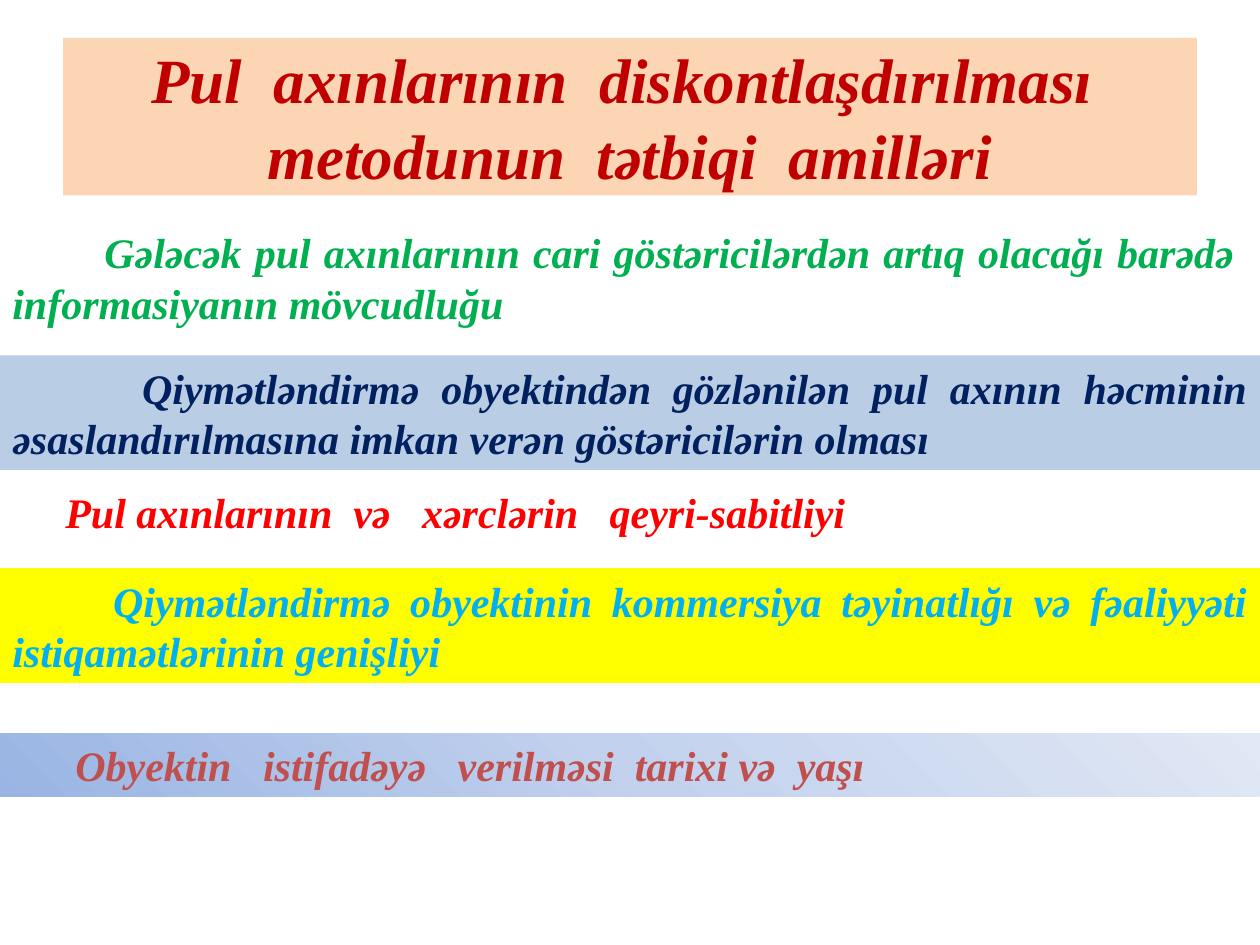
import pptx
import pptx.dml.color
import pptx.enum.shapes
import pptx.enum.text
import pptx.oxml
import pptx.oxml.ns
import pptx.util

Inches = pptx.util.Inches
RGBColor = pptx.dml.color.RGBColor
ALIGN = pptx.enum.text.PP_ALIGN
ANCHOR = pptx.enum.text.MSO_ANCHOR

FONT = "Times New Roman"
PEACH = RGBColor(0xFC, 0xD5, 0xB5)
DARK_RED = RGBColor(0xC0, 0x00, 0x00)
GREEN = RGBColor(0x00, 0xB0, 0x50)
PALE_BLUE = RGBColor(0xB9, 0xCD, 0xE5)
NAVY = RGBColor(0x00, 0x20, 0x60)
RED = RGBColor(0xFF, 0x00, 0x00)
YELLOW = RGBColor(0xFF, 0xFF, 0x00)
SKY = RGBColor(0x00, 0xB0, 0xF0)
BRICK = RGBColor(0xC0, 0x50, 0x4D)
GLOW = [
    (0, RGBColor(0x9A, 0xB5, 0xE4)),
    (50, RGBColor(0xC2, 0xD1, 0xED)),
    (100, RGBColor(0xE1, 0xE8, 0xF5)),
]


def write_text(box, text, color, size=24, align=ALIGN.JUSTIFY, indent=0, anchor=ANCHOR.MIDDLE):
    frame = box.text_frame
    frame.word_wrap = True
    frame.auto_size = pptx.enum.text.MSO_AUTO_SIZE.NONE
    frame.vertical_anchor = anchor
    para = frame.paragraphs[0]
    para.alignment = align
    if indent:
        para._p.get_or_add_pPr().set("indent", str(Inches(indent)))
    span = para.add_run()
    span.text = text
    span.font.name = FONT
    span.font.size = pptx.util.Pt(size)
    span.font.bold = span.font.italic = True
    span.font.color.rgb = color


def fill_from_corner(shape, stops):
    """Radial gradient that spreads from the bottom left corner."""
    stop_xml = "".join(
        f'<a:gs pos="{percent * 1000}"><a:srgbClr val="{color}"/></a:gs>'
        for percent, color in stops
    )
    gradient = pptx.oxml.parse_xml(
        f'<a:gradFill {pptx.oxml.ns.nsdecls("a")} rotWithShape="1"><a:gsLst>{stop_xml}</a:gsLst>'
        '<a:path path="circle"><a:fillToRect t="100000" r="100000"/></a:path></a:gradFill>'
    )
    shape.fill.solid()
    properties = shape._element.spPr
    solid = properties.find(pptx.oxml.ns.qn("a:solidFill"))
    properties.replace(solid, gradient)


deck = pptx.Presentation()
deck.slide_width, deck.slide_height = Inches(10), Inches(7.5)
page = deck.slides.add_slide(deck.slide_layouts[5])

title = page.shapes.title
title.left, title.top = Inches(0.5), Inches(0.3)
title.width, title.height = Inches(9), Inches(1.25)
title.fill.solid()
title.fill.fore_color.rgb = PEACH
write_text(title, "Pul  axınlarının  diskontlaşdırılması  metodunun  tətbiqi  amilləri",
           DARK_RED, size=36, align=ALIGN.CENTER)

forecast = page.shapes.add_textbox(0, Inches(1.34), Inches(10), Inches(1.82))
forecast.text_frame.margin_top = Inches(0.46)
write_text(forecast, "Gələcək pul axınlarının cari göstəricilərdən artıq olacağı barədə  "
           "informasiyanın mövcudluğu", GREEN, indent=0.73, anchor=ANCHOR.TOP)

# top, height, first-line indent, fill, text colour, text
bands = [
    (2.82, 0.91, 1.03, PALE_BLUE, NAVY,
     "Qiymətləndirmə obyektindən gözlənilən pul axının həcminin "
     "əsaslandırılmasına imkan verən göstəricilərin olması"),
    (3.81, 0.5, 0.42, None, RED, "Pul axınlarının  və   xərclərin   qeyri-sabitliyi"),
    (4.51, 0.91, 0.8, YELLOW, SKY,
     "Qiymətləndirmə obyektinin kommersiya təyinatlığı və fəaliyyəti "
     "istiqamətlərinin genişliyi"),
    (5.82, 0.5, 0.5, GLOW, BRICK, "Obyektin   istifadəyə   verilməsi  tarixi və  yaşı"),
]
for top, height, indent, fill, color, text in bands:
    area = (0, Inches(top), Inches(10), Inches(height))
    if fill is None:
        band = page.shapes.add_textbox(*area)
    else:
        band = page.shapes.add_shape(pptx.enum.shapes.MSO_SHAPE.RECTANGLE, *area)
        band.shadow.inherit = False
        band.line.fill.background()
        if fill is GLOW:
            fill_from_corner(band, GLOW)
        else:
            band.fill.solid()
            band.fill.fore_color.rgb = fill
    align = ALIGN.LEFT if fill is None else ALIGN.JUSTIFY
    write_text(band, text, color, align=align, indent=indent)

deck.save("out.pptx")
